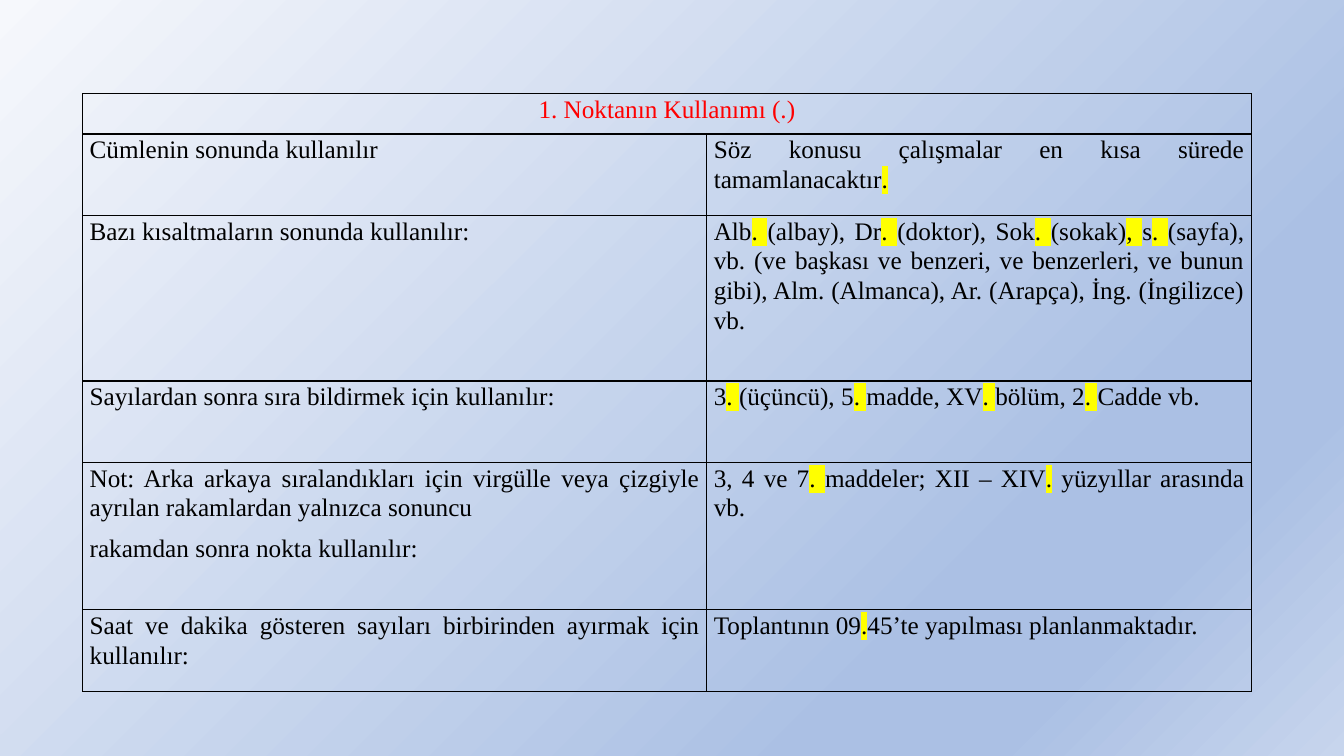
from typing import NamedTuple

from lxml.etree import SubElement
from pptx import Presentation
from pptx.dml.color import RGBColor
from pptx.enum.text import PP_ALIGN
from pptx.oxml import parse_xml
from pptx.oxml.ns import qn
from pptx.slide import Slide
from pptx.table import _Cell
from pptx.util import Inches, Pt

COLORS = {"ink": "000000", "title": "FF0000", "mark": "FFFF00",
          "pale": "F6F8FC", "blue": "ABC0E4", "mist": "C7D5ED"}
STOPS = [(0, "pale"), (74, "blue"), (83, "blue"), (100, "mist")]
WIDTHS = [6.19, 5.4]
NS = 'xmlns:a="http://schemas.openxmlformats.org/drawingml/2006/main"'
MARGINS = {"margin_left": Inches(0.07), "margin_right": Inches(0.07),
           "margin_top": 0, "margin_bottom": 0}
SPACING = {"line_spacing": 1.07, "space_after": Pt(8)}
FONT = {"name": "Times New Roman", "size": Pt(18)}


class Rule(NamedTuple):
    height: float
    usage: str
    sample: str


TITLE = "1. Noktanın Kullanımı (.)"
TOP = 0.4
RULES = [
    Rule(0.81, "Cümlenin sonunda kullanılır",
         "Söz konusu çalışmalar en kısa sürede tamamlanacaktır|.|"),
    Rule(1.64, "Bazı kısaltmaların sonunda kullanılır:",
         "Alb|. |(albay), Dr|. |(doktor), Sok|. |(sokak)|, |s|. |(sayfa), vb. "
         "(ve başkası ve benzeri, ve benzerleri, ve bunun gibi), "
         "Alm. (Almanca), Ar. (Arapça), İng. (İngilizce) vb."),
    Rule(0.81, "Sayılardan sonra sıra bildirmek için kullanılır:",
         "3|. |(üçüncü), 5|. |madde, XV|. |bölüm, 2|. |Cadde vb."),
    Rule(1.46, "Not: Arka arkaya sıralandıkları için virgülle veya çizgiyle "
         "ayrılan rakamlardan yalnızca sonuncu\nrakamdan sonra nokta kullanılır:",
         "3, 4 ve 7|. |maddeler; XII – XIV|.| yüzyıllar arasında vb."),
    Rule(0.81, "Saat ve dakika gösteren sayıları birbirinden ayırmak için kullanılır:",
         "Toplantının 09|.|45’te yapılması planlanmaktadır."),
]


def apply(target: object, values: dict) -> None:
    for name, value in values.items():
        setattr(target, name, value)


def paint(slide: Slide) -> None:
    fill = slide.background.fill
    fill.gradient()
    fill.gradient_angle = 315
    stops = slide.element.find(".//" + qn("a:gsLst"))
    for stop in list(stops):
        stops.remove(stop)
    for place, color in STOPS:
        stop = SubElement(stops, qn("a:gs"), pos=str(place * 1000))
        SubElement(stop, qn("a:srgbClr"), val=COLORS[color])


def frame(cell: _Cell) -> None:
    cell.fill.background()
    props = cell._tc.get_or_add_tcPr()
    for index, side in enumerate("LRTB"):
        props.insert(index, parse_xml(
            f'<a:ln{side} {NS} w="12700"><a:solidFill>'
            f'<a:srgbClr val="{COLORS["ink"]}"/></a:solidFill></a:ln{side}>'))


def write(cell: _Cell, text: str, color: str, align: PP_ALIGN) -> None:
    apply(cell, MARGINS)
    for index, line in enumerate(text.split("\n")):
        frame = cell.text_frame
        para = frame.add_paragraph() if index else frame.paragraphs[0]
        apply(para, SPACING | {"alignment": align})
        for order, part in enumerate(line.split("|")):
            if not part:
                continue
            run = para.add_run()
            run.text = part
            apply(run.font, FONT)
            run.font.color.rgb = RGBColor.from_string(COLORS[color])
            if order % 2:
                run._r.rPr.find(qn("a:latin")).addprevious(parse_xml(
                    f'<a:highlight {NS}><a:srgbClr val="{COLORS["mark"]}"/>'
                    '</a:highlight>'))


def main() -> None:
    deck = Presentation()
    deck.slide_width, deck.slide_height = Inches(13.33), Inches(7.5)
    slide = deck.slides.add_slide(deck.slide_layouts[6])
    paint(slide)
    heights = [TOP] + [rule.height for rule in RULES]
    table = slide.shapes.add_table(
        len(heights), len(WIDTHS), Inches(0.82), Inches(0.93),
        Inches(sum(WIDTHS)), Inches(sum(heights))).table
    apply(table, {"first_row": False, "horz_banding": False})
    for column, width in zip(table.columns, WIDTHS):
        column.width = Inches(width)
    for row, height in zip(table.rows, heights):
        row.height = Inches(height)
        for cell in row.cells:
            frame(cell)
    table.cell(0, 0).merge(table.cell(0, 1))
    write(table.cell(0, 0), TITLE, "title", PP_ALIGN.CENTER)
    for row, rule in enumerate(RULES, 1):
        for column, text in enumerate((rule.usage, rule.sample)):
            write(table.cell(row, column), text, "ink", PP_ALIGN.JUSTIFY)
    deck.save("out.pptx")


if __name__ == "__main__":
    main()
